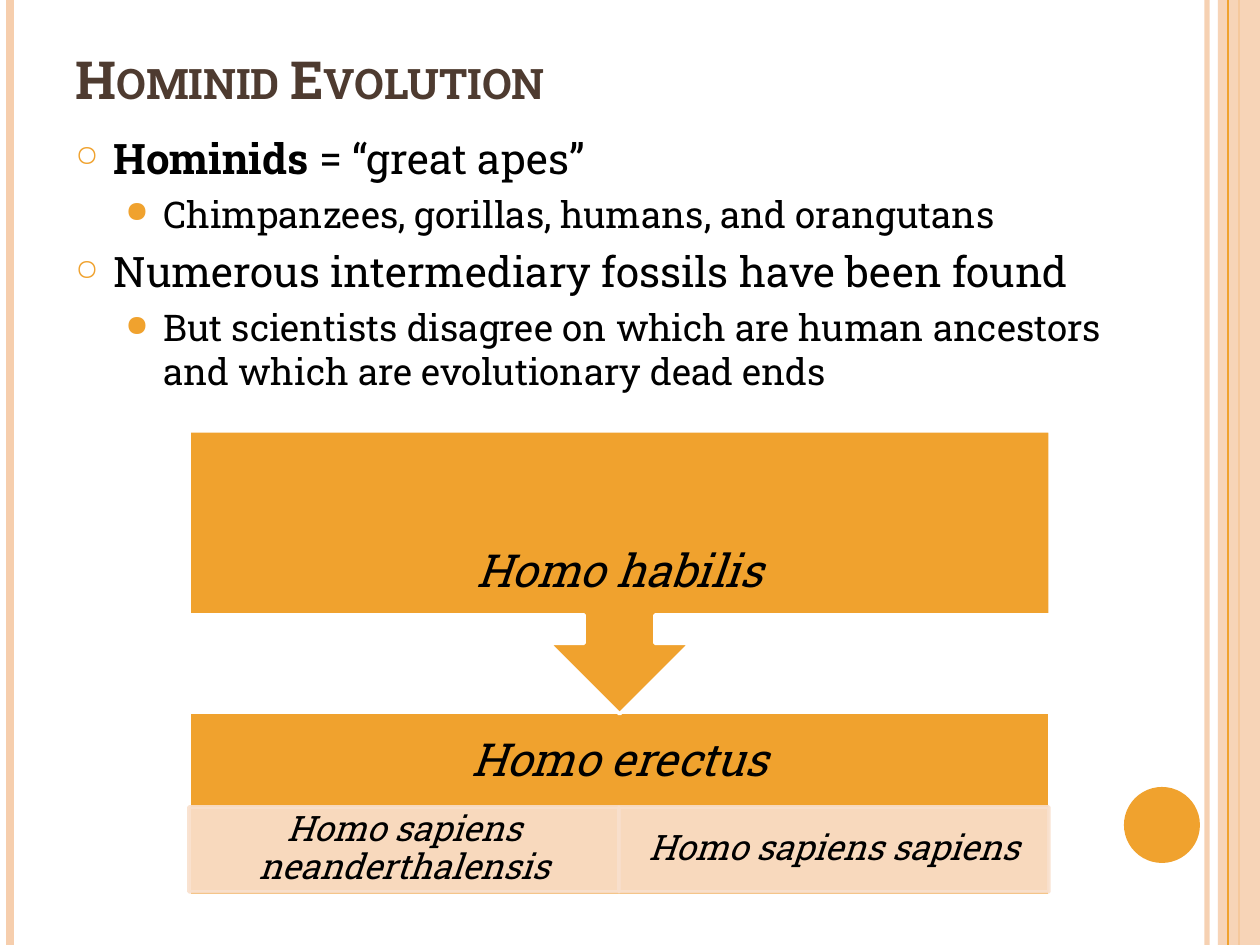
from lxml import etree
from pptx import Presentation
from pptx.dml.color import RGBColor
from pptx.enum import shapes, text
from pptx.oxml.ns import qn
from pptx.util import Emu, Pt

PX_PER_INCH = 126
WIDTH, HEIGHT = 1260, 945
FONT = "Roboto Slab"
ORANGE = RGBColor(0xF0, 0xA2, 0x2E)
PEACH = RGBColor(0xF6, 0xCE, 0xAD)
PALE = RGBColor(0xF9, 0xE0, 0xCD)
BROWN = RGBColor(0x4E, 0x3B, 0x30)
BLACK = RGBColor(0, 0, 0)
WHITE = RGBColor(255, 255, 255)


def px(value):
    return Emu(value * 914400 // PX_PER_INCH)


class SlideBuilder:
    def __init__(self, slide):
        self.slide = slide

    def paint(self, fill, color, alpha=100):
        fill.solid()
        fill.fore_color.rgb = color
        if alpha < 100:
            for color_element in fill._xPr.iter(qn("a:srgbClr")):
                if color_element.getparent().getparent() is fill._xPr:
                    etree.SubElement(color_element, qn("a:alpha"), val=str(alpha * 1000))

    def line(self, x, color, width, alpha=100):
        connector = self.slide.shapes.add_connector(
            shapes.MSO_CONNECTOR.STRAIGHT, px(x), 0, px(x), px(HEIGHT))
        connector.line.width = Pt(width)
        self.paint(connector.line.fill, color, alpha)
        etree.SubElement(connector._element.spPr, qn("a:effectLst"))

    def shape(self, kind, box, color, alpha=100, outline=None):
        shape = self.slide.shapes.add_shape(kind, *map(px, box))
        shape.shadow.inherit = False
        self.paint(shape.fill, color, alpha)
        if outline is None:
            shape.line.fill.background()
        else:
            shape.line.width = Pt(2)
            self.paint(shape.line.fill, outline, alpha)
        return shape

    def text_box(self, box):
        frame = self.slide.shapes.add_textbox(*map(px, box)).text_frame
        frame.word_wrap = True
        return frame

    def style(self, run, size, color=BLACK, bold=False, italic=False):
        font = run.font
        font.name, font.size, font.bold, font.italic = FONT, Pt(size), bold, italic
        font.color.rgb = color

    def label(self, frame, words, size, inset_x, inset_y):
        frame.text = words
        frame.vertical_anchor = text.MSO_ANCHOR.MIDDLE
        frame.margin_left = frame.margin_right = px(inset_x)
        frame.margin_top = frame.margin_bottom = px(inset_y)
        paragraph = frame.paragraphs[0]
        paragraph.alignment = text.PP_ALIGN.CENTER
        paragraph.line_spacing = 0.9
        self.style(paragraph.runs[0], size, italic=True)

    def title(self, box, words):
        frame = self.text_box(box)
        frame.vertical_anchor = text.MSO_ANCHOR.BOTTOM
        frame.text = words
        run = frame.paragraphs[0].runs[0]
        self.style(run, 30, BROWN, bold=True)
        run.font._element.set("cap", "small")

    def bullets(self, box, items):
        frame = self.text_box(box)
        for index, (level, bold_words, words) in enumerate(items):
            paragraph = frame.add_paragraph() if index else frame.paragraphs[0]
            margin, space, size, mark, percent = (
                (38, 6, 24, "○", 70), (88, 5, 21, "●", 80))[level]
            paragraph.level = level
            paragraph.space_before = Pt(space)
            for part, bold in ((bold_words, True), (words, False)):
                if part:
                    run = paragraph.add_run()
                    run.text = part
                    self.style(run, size, bold=bold)
            properties = paragraph._p.get_or_add_pPr()
            properties.set("marL", str(px(margin)))
            properties.set("indent", str(-px(38)))
            bullet_color = etree.SubElement(properties, qn("a:buClr"))
            etree.SubElement(bullet_color, qn("a:srgbClr"), val=str(ORANGE))
            etree.SubElement(properties, qn("a:buSzPct"), val=str(percent * 1000))
            etree.SubElement(properties, qn("a:buChar"), char=mark)


def main():
    presentation = Presentation()
    presentation.slide_width, presentation.slide_height = px(WIDTH), px(HEIGHT)
    builder = SlideBuilder(presentation.slides.add_slide(presentation.slide_layouts[6]))
    kinds = shapes.MSO_SHAPE

    # Side stripes and dot
    builder.line(1207, PEACH, 3, 93)
    builder.line(10, PEACH, 4.5)
    builder.line(1239, ORANGE, 1.5)
    builder.shape(kinds.RECTANGLE, (1218, 0, 42, HEIGHT), PEACH, 87)
    builder.line(1228, ORANGE, 0.75)
    builder.shape(kinds.OVAL, (1124, 787, 76, 76), ORANGE)

    # Title and bullets
    builder.title((63, 38, 1029, 78), "Hominid Evolution")
    builder.bullets((63, 126, 1113, 672), [
        (0, "Hominids", " = “great apes”"),
        (1, "", "Chimpanzees, gorillas, humans, and orangutans"),
        (0, "", "Numerous intermediary fossils have been found"),
        (1, "", "But scientists disagree on which are human ancestors "
                "and which are evolutionary dead ends"),
    ])

    # Homo erectus with its two descendants
    left, width = 189, 861
    builder.shape(kinds.RECTANGLE, (left, 712, width, 184), ORANGE, outline=WHITE)
    builder.label(builder.text_box((left, 712, width, 99)), "Homo erectus", 26, 25, 25)
    half = width // 2
    for column, name in enumerate(("Homo sapiens neanderthalensis", "Homo sapiens sapiens")):
        box = (left + column * half, 807, half, 85)
        shape = builder.shape(kinds.RECTANGLE, box, PALE, 90, PALE)
        builder.label(shape.text_frame, name, 20, 20, 4)

    # Homo habilis, pointing down
    box = (left, 431, width, 283)
    callout = builder.shape(kinds.UP_ARROW_CALLOUT, box, ORANGE, outline=WHITE)
    callout.rotation = 180
    builder.label(builder.text_box(box), "Homo habilis", 26, 25, 25)

    presentation.save("out.pptx")


if __name__ == "__main__":
    main()
